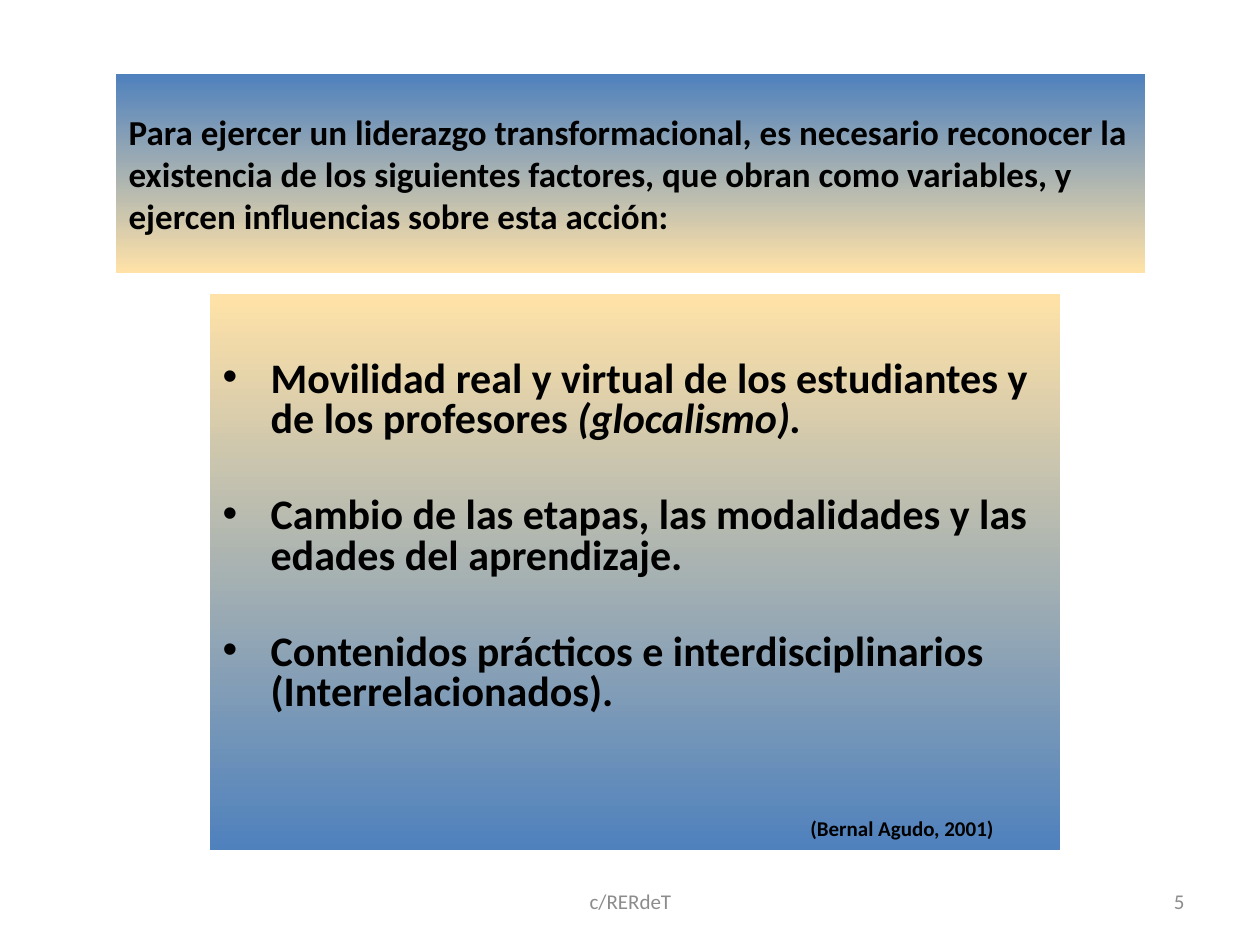
from pptx import Presentation
from pptx.dml.color import RGBColor
from pptx.enum.text import MSO_ANCHOR, MSO_AUTO_SIZE, PP_ALIGN
from pptx.util import Emu, Pt

LEFT, CENTER, RIGHT = PP_ALIGN.LEFT, PP_ALIGN.CENTER, PP_ALIGN.RIGHT
TOP, MIDDLE = MSO_ANCHOR.TOP, MSO_ANCHOR.MIDDLE
NO_FIT = MSO_AUTO_SIZE.NONE
EMU_PER_PX = 914400 / 126
BLUE, CREAM, BLACK, GRAY = "4F81BD", "FFE2A7", "000000", "8C8C8C"


def px(length):
    return Emu(round(length * EMU_PER_PX))


def style(para, size, color, bold):
    for span in para.runs:
        span.font.name = "Calibri"
        span.font.size = Pt(size)
        span.font.bold = bold
        span.font.color.rgb = RGBColor.from_string(color)


deck = Presentation()
deck.slide_width, deck.slide_height = px(1260), px(945)
page = deck.slides.add_slide(deck.slide_layouts[1])
title, body = page.placeholders[0], page.placeholders[1]

# Panels: the two gradients mirror each other
for panel, bounds, colors, anchor in (
    (title, (116, 74, 1029, 199), (BLUE, CREAM), MIDDLE),
    (body, (210, 294, 850, 556), (CREAM, BLUE), TOP),
):
    panel.left, panel.top, panel.width, panel.height = map(px, bounds)
    panel.fill.gradient()
    panel.fill.gradient_angle = 270
    for stop, position, color in zip(panel.fill.gradient_stops, (0, 1), colors):
        stop.position = position
        stop.color.rgb = RGBColor.from_string(color)
    panel.text_frame.auto_size = NO_FIT
    panel.text_frame.vertical_anchor = anchor

# Title
title.text_frame.text = (
    "Para ejercer un liderazgo transformacional, es necesario reconocer la "
    "existencia de los siguientes factores, que obran como variables, y "
    "ejercen influencias sobre esta acción:"
)
heading = title.text_frame.paragraphs[0]
heading.alignment = LEFT
style(heading, 20, BLACK, True)

# Factors: plain text followed by an optional italic ending
factors = [
    ("Movilidad real y virtual de los estudiantes y de los profesores ", "(glocalismo)."),
    ("Cambio de las etapas, las modalidades y las edades del aprendizaje.", ""),
    ("Contenidos prácticos e interdisciplinarios (Interrelacionados).", ""),
]
frame = body.text_frame
frame.margin_top = px(67)
for index, (plain, ending) in enumerate(factors):
    para = frame.add_paragraph() if index else frame.paragraphs[0]
    para.text = plain
    if ending:
        span = para.add_run()
        span.text = ending
        span.font.italic = True
    para.line_spacing = 0.8
    para.space_before = Pt(32 if index else 0)
    properties = para._p.get_or_add_pPr()
    properties.set("marL", str(px(48)))
    properties.set("indent", str(-px(48)))
    style(para, 24, BLACK, True)

# Citation, footer and page number
for text, bounds, align, anchor, color, bold, wrap in (
    ("(Bernal Agudo, 2001)", (798, 809, 236, 38), LEFT, TOP, BLACK, True, False),
    ("c/RERdeT", (431, 876, 399, 50), CENTER, MIDDLE, GRAY, False, True),
    ("5", (903, 876, 294, 50), RIGHT, MIDDLE, GRAY, False, True),
):
    box = page.shapes.add_textbox(*map(px, bounds))
    box.text_frame.text = text
    box.text_frame.word_wrap = wrap
    box.text_frame.vertical_anchor = anchor
    para = box.text_frame.paragraphs[0]
    para.alignment = align
    style(para, 12, color, bold)

deck.save("out.pptx")
